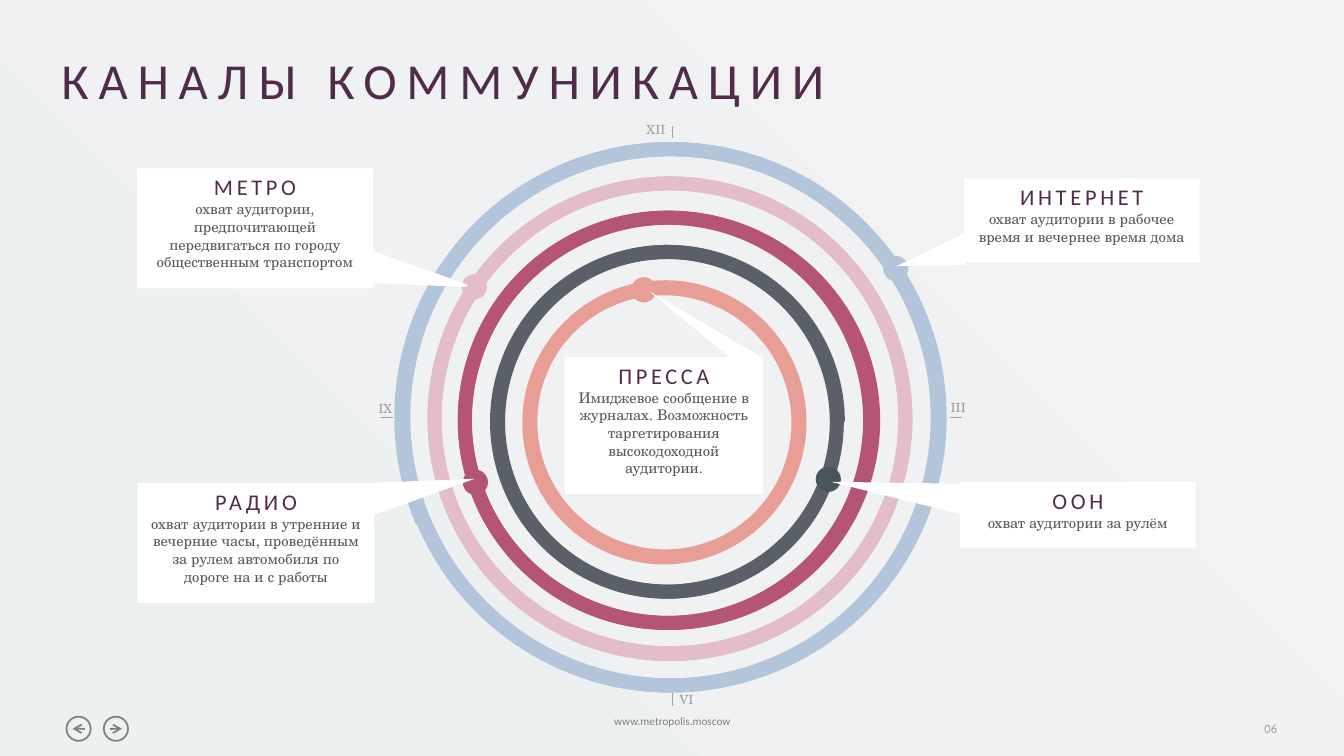
import pptx
import pptx.dml.color
import pptx.enum.shapes
import pptx.enum.text
import pptx.oxml.ns
import pptx.util
from lxml import etree
from pptx.dml.color import RGBColor
from pptx.util import Inches

PLUM = RGBColor(0x51, 0x2B, 0x4A)
TEXT_GREY = RGBColor(0x59, 0x59, 0x59)
MID_GREY = RGBColor(0x80, 0x80, 0x80)
PALE_GREY = RGBColor(0xA0, 0x9F, 0xA0)
WHITE = RGBColor(0xFF, 0xFF, 0xFF)
CORAL = RGBColor(0xE8, 0x9E, 0x95)
BLUE = RGBColor(0xB3, 0xC5, 0xDA)
BERRY = RGBColor(0xB5, 0x54, 0x75)
SLATE = RGBColor(0x59, 0x60, 0x67)
DARK_SLATE = RGBColor(0x48, 0x55, 0x5A)
PINK = RGBColor(0xE3, 0xBE, 0xCA)
MIST = RGBColor(0xEC, 0xF0, 0xF1)
PEARL = RGBColor(0xF2, 0xF2, 0xF2)

SANS = "Calibri"
SERIF = "TeX Gyre Schola"
PRESETS = pptx.enum.shapes.MSO_SHAPE
ALIGN = pptx.enum.text.PP_ALIGN
ANCHOR = pptx.enum.text.MSO_ANCHOR
RING_WIDTH = 10
DOT_SIZE = 0.25


def inches(values):
    return [Inches(value) for value in values]


def write_paragraph(para, text, font, size, color, align=ALIGN.LEFT, spacing=0):
    span = para.add_run()
    span.text = text
    para.alignment = align
    para.font.name = font
    para.font.size = pptx.util.Pt(size)
    para.font.color.rgb = color
    if spacing:
        span._r.get_or_add_rPr().set("spc", str(round(spacing * 100)))


def set_margins(frame, left, top, right, bottom):
    frame.margin_left, frame.margin_top = Inches(left), Inches(top)
    frame.margin_right, frame.margin_bottom = Inches(right), Inches(bottom)


def add_label(page, place, text, font, size, color, align=ALIGN.LEFT,
              spacing=0, side_margin=0.1, anchor=ANCHOR.MIDDLE, wrap=False):
    frame = page.shapes.add_textbox(*inches(place)).text_frame
    frame.word_wrap = wrap
    frame.vertical_anchor = anchor
    set_margins(frame, side_margin, 0.05, side_margin, 0.05)
    write_paragraph(frame.paragraphs[0], text, font, size, color, align, spacing)


def add_filled(page, preset, place, color):
    shape = page.shapes.add_shape(preset, *inches(place))
    shape.shadow.inherit = False
    shape.fill.solid()
    shape.fill.fore_color.rgb = color
    shape.line.fill.background()
    return shape


def add_outline(page, preset, place, color, width=RING_WIDTH):
    shape = page.shapes.add_shape(preset, *inches(place))
    shape.shadow.inherit = False
    shape.fill.background()
    shape.line.color.rgb = color
    shape.line.width = pptx.util.Pt(width)
    return shape


def add_ring(page, place, color):
    add_outline(page, PRESETS.OVAL, place, color)


def add_ring_arc(page, place, color, start, end):
    """Arc running clockwise between two angles in degrees."""
    arc = add_outline(page, PRESETS.ARC, place, color)
    # Angles are stored in 1/60000 degree, adjustments in 1/100000
    arc.adjustments[0] = start * 0.6
    arc.adjustments[1] = end * 0.6


def add_line(page, start, end, color, width, arrow=False):
    line = page.shapes.add_connector(
        pptx.enum.shapes.MSO_CONNECTOR.STRAIGHT, *inches(start + end))
    line.line.color.rgb = color
    line.line.width = pptx.util.Pt(width)
    if arrow:
        etree.SubElement(line.line._get_or_add_ln(),
                         pptx.oxml.ns.qn("a:tailEnd"), type="arrow")
    etree.SubElement(line._element.spPr, pptx.oxml.ns.qn("a:effectLst"))


def add_nav_button(page, left, direction):
    middle = (left + 0.12, 7.23)
    add_outline(page, PRESETS.OVAL, (left, 7.11, 0.24, 0.24), MID_GREY, 1.25)
    add_line(page, (middle[0] - 0.06 * direction, middle[1]),
             (middle[0] + 0.06 * direction, middle[1]), MID_GREY, 1.25, arrow=True)


def add_callout(page, place, heading, body, dot, dot_color, pointer):
    # Dot on the ring
    add_filled(page, PRESETS.OVAL, dot + (DOT_SIZE, DOT_SIZE), dot_color)
    # Pointer from the box to the dot
    builder = page.shapes.build_freeform(*inches(pointer[0]))
    builder.add_line_segments([inches(point) for point in pointer[1:]], close=True)
    wedge = builder.convert_to_shape()
    wedge.shadow.inherit = False
    wedge.fill.solid()
    wedge.fill.fore_color.rgb = WHITE
    wedge.line.fill.background()
    # Box with heading and description
    frame = add_filled(page, PRESETS.RECTANGLE, place, WHITE).text_frame
    frame.word_wrap = True
    frame.vertical_anchor = ANCHOR.TOP
    set_margins(frame, 0.1, 0.05, 0.1, 0.16)
    write_paragraph(frame.paragraphs[0], heading, SANS, 16, PLUM, ALIGN.CENTER, 2.7)
    write_paragraph(frame.add_paragraph(), body, SERIF, 10.5, TEXT_GREY, ALIGN.CENTER)


def add_background(page):
    fill = page.background.fill
    fill.gradient()
    fill.gradient_angle = 45
    for stop, color in zip(fill.gradient_stops, (MIST, PEARL)):
        stop.color.rgb = color


def add_clock_marks(page):
    for start, end in (((6.67, 6.88), (6.67, 7)), ((6.67, 1.25), (6.67, 1.37)),
                       ((9.42, 4.14), (9.54, 4.14)), ((3.78, 4.14), (3.9, 4.14))):
        add_line(page, start, end, PALE_GREY, 0.75)
    for text, place, align, wrap in (
            ("III", (9.33, 3.92, 0.35, 0.25), ALIGN.LEFT, False),
            ("VI", (6.64, 6.81, 0.34, 0.25), ALIGN.LEFT, True),
            ("IX", (3.65, 3.93, 0.34, 0.25), ALIGN.RIGHT, False),
            ("XII", (6.31, 1.16, 0.39, 0.25), ALIGN.RIGHT, False)):
        add_label(page, place, text, SERIF, 9, PALE_GREY, align, wrap=wrap)


def main():
    deck = pptx.Presentation()
    deck.slide_width, deck.slide_height = Inches(13.33), Inches(7.5)
    page = deck.slides.add_slide(deck.slide_layouts[6])
    add_background(page)

    # Title, footer and navigation
    add_label(page, (0.61, 0.44, 8.55, 0.71), "КАНАЛЫ КОММУНИКАЦИИ", SANS, 36, PLUM,
              spacing=7, side_margin=0, anchor=ANCHOR.TOP)
    add_label(page, (12.44, 7.1, 0.33, 0.25), "06", SANS, 9, PALE_GREY, ALIGN.CENTER)
    add_label(page, (5.87, 7.04, 1.6, 0.24), "www.metropolis.moscow", SANS, 8,
              MID_GREY, ALIGN.CENTER, anchor=ANCHOR.TOP)
    add_nav_button(page, 1.03, 1)
    add_nav_button(page, 0.66, -1)
    add_clock_marks(page)

    # Rings, doubled with a slight offset for an uneven stroke
    add_ring(page, (5.26, 2.85, 2.67, 2.67), CORAL)
    add_ring(page, (5.25, 2.86, 2.67, 2.67), CORAL)
    add_ring(page, (4, 1.48, 5.32, 5.32), BLUE)
    add_ring_arc(page, (3.98, 1.48, 5.32, 5.32), BLUE, 157, 107)
    add_ring_arc(page, (3.99, 1.48, 5.32, 5.32), BLUE, 78, -72)
    add_ring(page, (4.61, 2.16, 4.02, 4.02), BERRY)
    add_ring(page, (4.61, 2.16, 4.05, 4.02), BERRY)
    add_ring(page, (4.93, 2.5, 3.37, 3.37), SLATE)
    add_ring_arc(page, (4.94, 2.5, 3.37, 3.37), SLATE, 73, -130)

    # Callouts beneath the pink ring
    add_callout(page, (9.56, 1.77, 2.34, 0.83), "ИНТЕРНЕТ",
                "охват аудитории в рабочее время и вечернее время дома",
                (8.76, 2.54), BLUE, ((9.58, 2.31), (8.89, 2.64), (9.58, 2.63)))
    add_callout(page, (1.36, 1.67, 2.34, 1.19), "МЕТРО",
                "охват аудитории, предпочитающей передвигаться по городу "
                "общественным транспортом",
                (4.58, 2.72), PINK, ((3.7, 2.49), (4.71, 2.85), (3.7, 2.81)))
    add_ring(page, (4.31, 1.82, 4.67, 4.66), PINK)
    add_ring(page, (4.31, 1.82, 4.67, 4.67), PINK)

    # Callouts above the rings
    add_callout(page, (5.6, 3.54, 1.97, 1.36), "ПРЕССА",
                "Имиджевое сообщение в журналах. Возможность таргетирования "
                "высокодоходной аудитории.",
                (6.26, 2.75), CORAL, ((7.56, 3.55), (6.44, 2.89), (7.24, 3.55)))
    add_callout(page, (9.52, 4.78, 2.34, 0.66), "ООН", "охват аудитории за рулём",
                (8.09, 4.63), DARK_SLATE, ((9.56, 4.8), (8.24, 4.78), (9.56, 5.11)))
    add_callout(page, (1.37, 4.79, 2.34, 1.19), "РАДИО",
                "охват аудитории в утренние и вечерние часы, проведённым за рулем "
                "автомобиля по дороге на и с работы",
                (4.59, 4.66), BERRY, ((3.71, 4.79), (4.71, 4.75), (3.71, 5.11)))

    deck.save("out.pptx")


if __name__ == "__main__":
    main()
